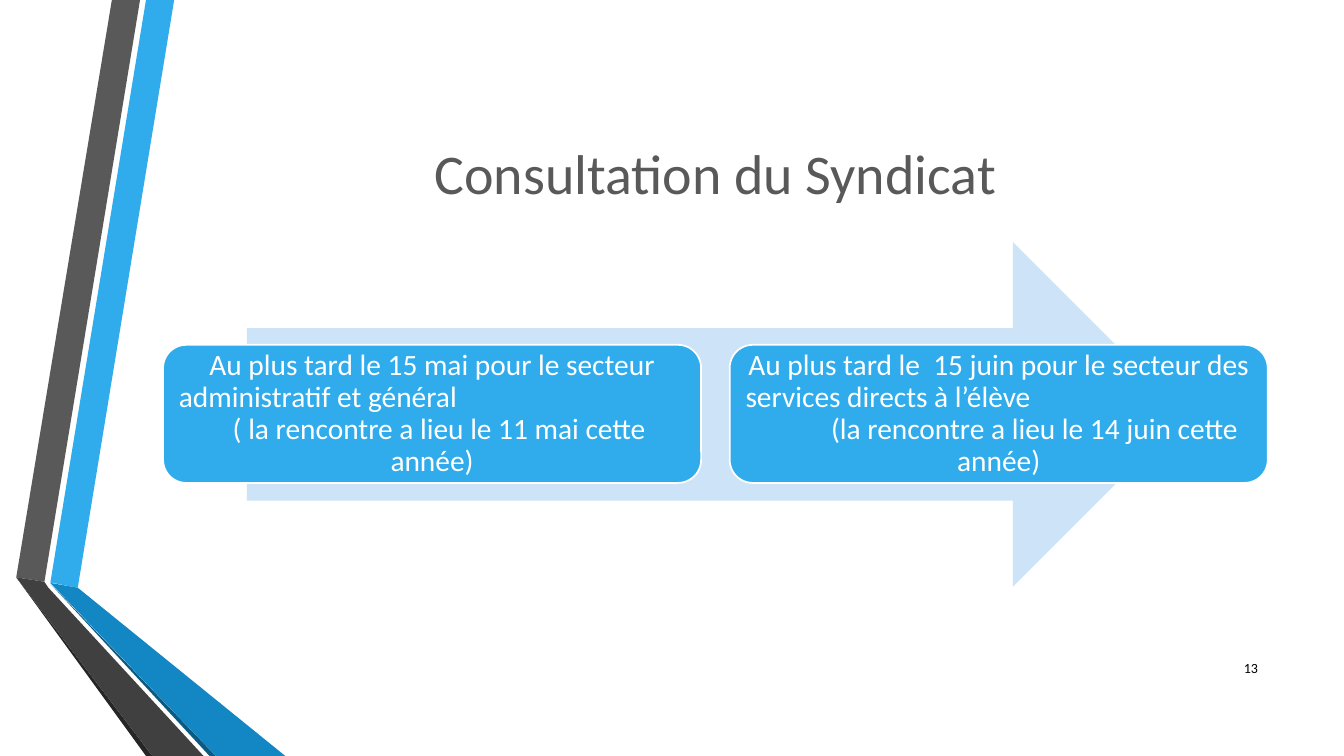
from lxml.etree import SubElement
from pptx import Presentation
from pptx.dml.color import RGBColor
from pptx.enum.shapes import MSO_SHAPE as Shape
from pptx.enum.text import MSO_ANCHOR as Anchor, PP_ALIGN as Align
from pptx.oxml.ns import qn
from pptx.util import Cm, Pt

FONT = "Calibri"
WHITE = RGBColor(0xFF, 0xFF, 0xFF)
BLACK = RGBColor(0x00, 0x00, 0x00)
BLUE = RGBColor(0x30, 0xAC, 0xEC)
MID_BLUE = RGBColor(0x12, 0x87, 0xC3)
DARK_BLUE = RGBColor(0x0C, 0x5A, 0x82)
PALE_BLUE = RGBColor(0xCD, 0xE3, 0xF8)
GREY = RGBColor(0x59, 0x59, 0x59)
DARK_GREY = RGBColor(0x40, 0x40, 0x40)
DARKEST_GREY = RGBColor(0x26, 0x26, 0x26)

TITLE = "Consultation du Syndicat"
PAGE_NUMBER = "13"
# Each line of a step: text, alignment, first-line indent in cm
STEPS = [
    [("Au plus tard le 15 mai pour le secteur", Align.CENTER, 0),
     ("administratif et général", Align.LEFT, 0),
     ("( la rencontre a lieu le 11 mai cette année)", Align.CENTER, 0.36)],
    [("Au plus tard le  15 juin pour le secteur des", Align.CENTER, 0),
     ("services directs à l’élève", Align.LEFT, 0),
     ("(la rencontre a lieu le 14 juin cette année)", Align.CENTER, 1.8)],
]
# Folded ribbons at the left edge: colour, corners in cm
RIBBONS = [
    (BLUE, [(1.27, 14.68), (1.96, 14.81), (4.39, 0), (3.68, 0)]),
    (GREY, [(3.53, 0), (2.82, 0), (0.41, 14.55), (1.12, 14.66)]),
    (DARKEST_GREY, [(0.41, 14.55), (3.68, 19.05), (3.84, 19.05)]),
    (DARK_BLUE, [(1.27, 14.71), (5.28, 19.05), (5.44, 19.05)]),
    (MID_BLUE, [(1.27, 14.69), (5.44, 19.05), (7.19, 19.05), (1.96, 14.81)]),
    (DARK_GREY, [(5.13, 19.05), (1.22, 14.81), (1.12, 14.66),
                 (0.41, 14.55), (3.84, 19.05)]),
]

CONTENT_LEFT, CONTENT_WIDTH = 4.11, 27.84
STEP_TOP, STEP_WIDTH, STEP_HEIGHT = 8.69, 13.56, 3.48
STEP_GAP = CONTENT_WIDTH - 2 * STEP_WIDTH


def place(box, left, top, width, height):
    box.left, box.top, box.width, box.height = map(Cm, (left, top, width, height))


def paint(shape, color):
    shape.shadow.inherit = False
    shape.fill.solid()
    shape.fill.fore_color.rgb = color
    shape.line.fill.background()


def format_para(para, size, color, align):
    para.alignment = align
    for span in para.runs:
        span.font.name = FONT
        span.font.size = Pt(size)
        span.font.color.rgb = color


def add_ribbon(page, color, corners):
    points = [(Cm(x), Cm(y)) for x, y in corners]
    builder = page.shapes.build_freeform(*points[0])
    builder.add_line_segments(points[1:], close=True)
    paint(builder.convert_to_shape(), color)


def add_step(page, index, lines):
    left = CONTENT_LEFT + index * (STEP_WIDTH + STEP_GAP)
    box = page.shapes.add_shape(Shape.ROUNDED_RECTANGLE, Cm(left), Cm(STEP_TOP),
                                Cm(STEP_WIDTH), Cm(STEP_HEIGHT))
    paint(box, BLUE)
    box.line.color.rgb = WHITE
    box.line.width = Pt(1.25)
    frame = box.text_frame
    frame.word_wrap = True
    frame.vertical_anchor = Anchor.MIDDLE
    frame.margin_left = frame.margin_right = Cm(0.23)
    frame.margin_top = frame.margin_bottom = Cm(0.23)
    frame.text = "\n".join(text for text, _, _ in lines)
    for para, (_, align, indent) in zip(frame.paragraphs, lines):
        format_para(para, 21, WHITE, align)
        para.line_spacing = 0.9
        para.space_after = Pt(0)
        properties = para._p.get_or_add_pPr()
        properties.set("marL", "0")
        properties.set("indent", str(Cm(indent)))


def main():
    deck = Presentation()
    deck.slide_width, deck.slide_height = Cm(33.87), Cm(19.05)
    page = deck.slides.add_slide(deck.slide_layouts[5])

    for color, corners in RIBBONS:
        add_ribbon(page, color, corners)

    title = page.shapes.title
    place(title, CONTENT_LEFT, 1.9, CONTENT_WIDTH, 4.88)
    title.text_frame.text = TITLE
    title.text_frame.vertical_anchor = Anchor.MIDDLE
    format_para(title.text_frame.paragraphs[0], 40, GREY, Align.CENTER)

    arrow = page.shapes.add_shape(Shape.RIGHT_ARROW, Cm(6.22), Cm(6.1),
                                  Cm(23.65), Cm(8.69))
    paint(arrow, PALE_BLUE)
    for index, lines in enumerate(STEPS):
        add_step(page, index, lines)

    number = page.shapes.add_textbox(Cm(30.43), Cm(16.31), Cm(1.52), Cm(1.02))
    number.text_frame.word_wrap = True
    number.text_frame.vertical_anchor = Anchor.MIDDLE
    number.text_frame.text = PAGE_NUMBER
    format_para(number.text_frame.paragraphs[0], 10, BLACK, Align.RIGHT)

    deck.save("out.pptx")


if __name__ == "__main__":
    main()
